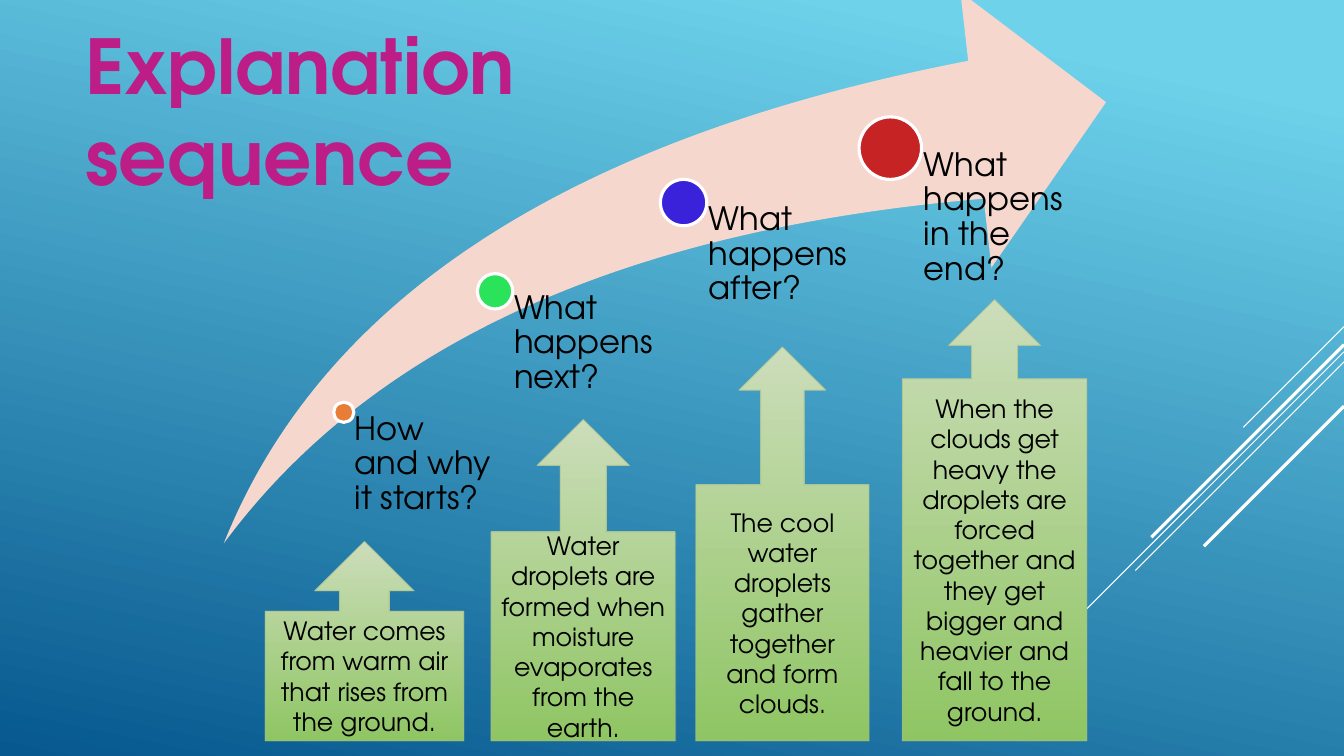
from lxml import etree
from pptx import Presentation
from pptx.dml.color import RGBColor
from pptx.enum.shapes import MSO_CONNECTOR as Connector, MSO_SHAPE as Preset
from pptx.enum.text import MSO_ANCHOR as Anchor, MSO_AUTO_SIZE as AutoSize, PP_ALIGN as Align
from pptx.oxml.ns import qn
from pptx.util import Inches, Pt

FONT = "TeX Gyre Adventor"
PAGE_WIDTH, PAGE_HEIGHT = 13.33, 7.5
CALLOUT_BOTTOM = 7.35

# start height at the right edge, diagonal run, line width
STREAKS = [(3.24, 1, 0.75), (3.49, 3.26, 0.75), (3.59, 2.07, 0.75),
           (3.42, 1.91, 2.25), (4.03, 1.39, 2.25)]
# centre x, centre y, diameter, label width, colour, question
STEPS = [
    (3.41, 4.09, 0.2, 1.5, "E87D37", "How and why it starts?"),
    (4.91, 2.89, 0.35, 1.84, "2BE25B", "What happens next?"),
    (6.78, 2.01, 0.46, 1.84, "3922D9", "What happens after?"),
    (8.83, 1.47, 0.62, 1.84, "C62324", "What happens in the end?"),
]
# left, top, width, body share of the height, answer
ANSWERS = [
    (2.63, 5.37, 1.97, 0.65, "Water comes from warm air that rises from the ground."),
    (4.87, 4.16, 1.83, 0.65,
     "Water droplets are formed when moisture evaporates from the earth."),
    (6.9, 3.44, 1.72, 0.65, "The cool water droplets gather together and form clouds."),
    (8.95, 2.97, 1.83, 0.82,
     "When the clouds get heavy the droplets are forced together and they get "
     "bigger and heavier and fall to the ground."),
]


def color(hex_text):
    return RGBColor.from_string(hex_text)


def fill_gradient(fill, stops, angle):
    """Fill with (position, colour) stops; the angle runs clockwise."""
    fill.gradient()
    fill.gradient_angle = (360 - angle) % 360
    for stop, (position, hex_text) in zip(fill.gradient_stops, stops):
        stop.position = position
        stop.color.rgb = color(hex_text)


def add_span(para, text, size, hex_text="000000", bold=False):
    span = para.add_run()
    span.text = text
    span.font.name = FONT
    span.font.size = Pt(size)
    span.font.bold = bold
    span.font.color.rgb = color(hex_text)


def add_preset(page, preset, left, top, width, height):
    shape = page.shapes.add_shape(
        preset, Inches(left), Inches(top), Inches(width), Inches(height))
    shape.shadow.inherit = False
    return shape


def add_streaks(page, right):
    for top, run, weight in STREAKS:
        streak = page.shapes.add_connector(
            Connector.STRAIGHT, Inches(right), Inches(top),
            Inches(right - run), Inches(top + run))
        streak.line.color.rgb = color("FFFFFF")
        streak.line.width = Pt(weight)
        etree.SubElement(streak._element.spPr, qn("a:effectLst"))


def add_title(page, left, top, width, height):
    title = page.shapes.title
    title.left, title.top = Inches(left), Inches(top)
    title.width, title.height = Inches(width), Inches(height)
    frame = title.text_frame
    frame.word_wrap = False
    frame.auto_size = AutoSize.NONE
    frame.vertical_anchor = Anchor.TOP
    for index, line in enumerate(["Explanation", "sequence"]):
        para = frame.add_paragraph() if index else frame.paragraphs[0]
        para.alignment = Align.LEFT
        add_span(para, line, 54, "BC1D87", bold=True)


def add_step(page, x, y, diameter, label_width, hex_text, question, bottom):
    """Dot centred on (x, y), with its label hanging from the centre."""
    dot = add_preset(page, Preset.OVAL, x - diameter / 2, y - diameter / 2,
                     diameter, diameter)
    dot.fill.solid()
    dot.fill.fore_color.rgb = color(hex_text)
    dot.line.color.rgb = color("FFFFFF")
    dot.line.width = Pt(2.25)

    label = page.shapes.add_textbox(
        Inches(x), Inches(y), Inches(label_width), Inches(bottom - y))
    frame = label.text_frame
    frame.word_wrap = True
    frame.margin_left = Inches(0.54 * diameter)
    frame.margin_top = frame.margin_right = frame.margin_bottom = 0
    para = frame.paragraphs[0]
    para.line_spacing = 0.9
    add_span(para, question, 23)


def add_swoosh(page, left, top, width, height):
    swoosh = add_preset(page, Preset.SWOOSH_ARROW, left, top, width, height)
    swoosh.adjustments[0] = swoosh.adjustments[1] = 0.25
    swoosh.fill.solid()
    swoosh.fill.fore_color.rgb = color("F6D7CE")
    swoosh.line.fill.background()
    for step in STEPS:
        add_step(page, *step, bottom=top + height)


def add_answer(page, left, top, width, body_share, answer):
    box = add_preset(page, Preset.UP_ARROW_CALLOUT, left, top, width,
                     CALLOUT_BOTTOM - top)
    box.adjustments[3] = body_share
    fill_gradient(box.fill, [(0, "CCDDBA"), (1, "8FC563")], 90)
    box.line.color.rgb = color("A4BB8B")
    box.line.width = Pt(0.75)
    line_color = box.line._ln.find(".//" + qn("a:srgbClr"))
    etree.SubElement(line_color, qn("a:alpha"), val="60000")
    frame = box.text_frame
    frame.word_wrap = True
    frame.vertical_anchor = Anchor.MIDDLE
    para = frame.paragraphs[0]
    para.alignment = Align.CENTER
    add_span(para, answer, 18)


def main():
    deck = Presentation()
    deck.slide_width, deck.slide_height = Inches(PAGE_WIDTH), Inches(PAGE_HEIGHT)
    page = deck.slides.add_slide(deck.slide_layouts.get_by_name("Title Only"))
    fill_gradient(page.background.fill, [(0.1, "6ED2EB"), (1, "06588E")], 102)
    add_streaks(page, PAGE_WIDTH)
    add_swoosh(page, 2.22, -0.08, 8.75, 5.47)
    for answer in ANSWERS:
        add_answer(page, *answer)
    add_title(page, 0.75, 0.14, 4.72, 1.92)
    deck.save("out.pptx")


if __name__ == "__main__":
    main()
